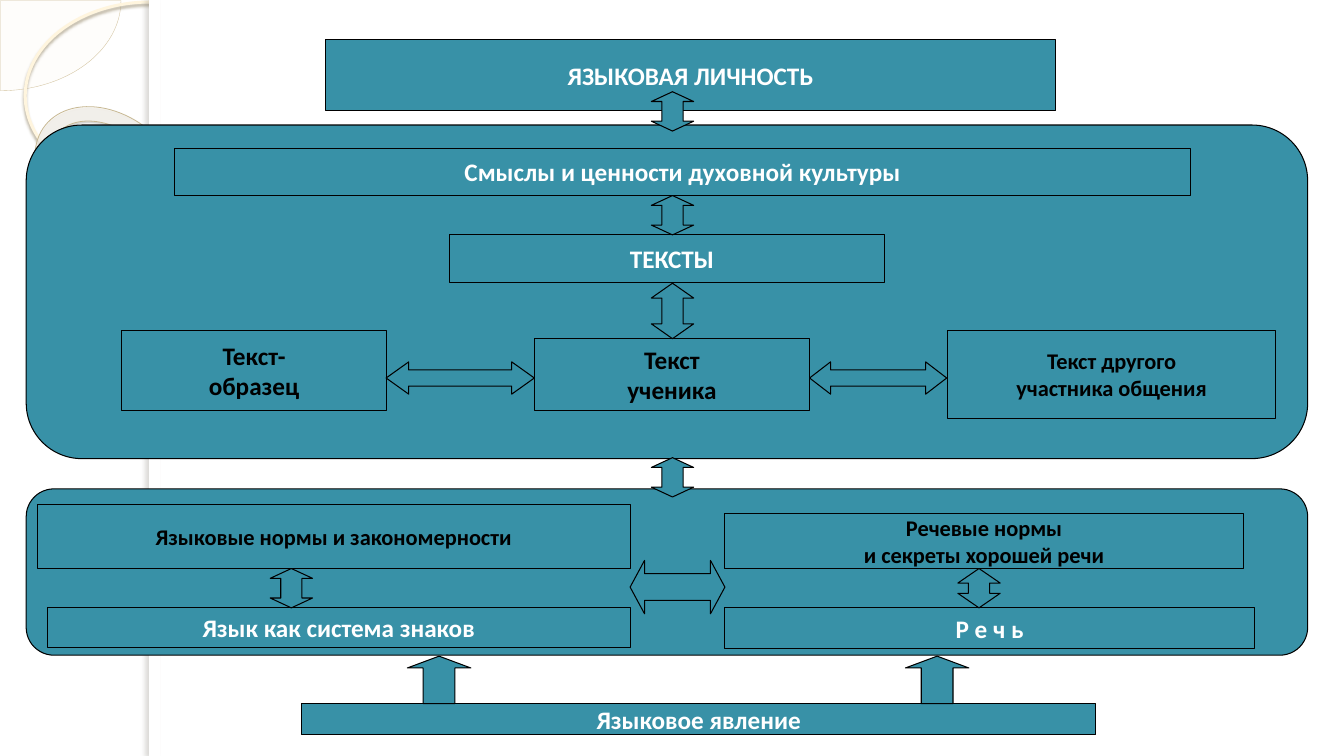
from dataclasses import dataclass
from typing import NamedTuple, Optional

from lxml.etree import SubElement
from pptx import Presentation
from pptx.dml.color import RGBColor
from pptx.enum.shapes import MSO_SHAPE
from pptx.enum.text import MSO_ANCHOR, PP_ALIGN
from pptx.oxml.ns import qn
from pptx.util import Pt

EMU_PER_PX = 9144  # 100 px to the inch


@dataclass(frozen=True)
class Theme:
    font: str = "Calibri"
    teal: str = "3891A7"
    black: str = "000000"
    white: str = "FFFFFF"
    pie_fill: str = "FEFAF4"
    pie_line: str = "D3C39F"
    ring_line: str = "FFF5DE"
    ring_shadow: str = "B0A68F"
    donut_fill: str = "FFFCF6"
    donut_line: str = "C7B893"
    donut_shadow: str = "5A5444"
    strip_shadow: str = "736F63"
    large: int = 18
    small: int = 16
    outline: float = 0.75


THEME = Theme()


class Frame(NamedTuple):
    left: int
    top: int
    width: int
    height: int


class Shadow(NamedTuple):
    color: str
    opacity: int
    blur: float
    distance: float
    angle: int


@dataclass(frozen=True)
class Ornament:
    kind: MSO_SHAPE
    frame: Frame
    fill: Optional[str] = None
    opacity: int = 100
    line: Optional[str] = None
    line_width: float = 0
    adjustments: tuple[float, ...] = ()
    rotation: float = 0
    shadow: Optional[Shadow] = None


@dataclass(frozen=True)
class Box:
    frame: Frame
    lines: tuple[str, ...]
    color: str = THEME.white
    size: int = THEME.large
    shift: int = 0


class Arrow(NamedTuple):
    kind: MSO_SHAPE
    frame: Frame
    head: float


ORNAMENTS = (
    Ornament(MSO_SHAPE.PIE, Frame(-119, -89, 239, 179), THEME.pie_fill, 33,
             THEME.pie_line, 0.25, (0, 54)),
    Ornament(MSO_SHAPE.OVAL, Frame(25, 2, 248, 186), line=THEME.ring_line,
             line_width=2.15, shadow=Shadow(THEME.ring_shadow, 85, 2, 2, 90)),
    Ornament(MSO_SHAPE.DONUT, Frame(27, 115, 164, 121), THEME.donut_fill, 65,
             THEME.donut_line, 0.58, (0.12,), 38.6,
             Shadow(THEME.donut_shadow, 35, 1, 1.2, 75)),
    Ornament(MSO_SHAPE.RECTANGLE, Frame(148, 0, 1185, 750), THEME.white),
    Ornament(MSO_SHAPE.RECTANGLE, Frame(148, 0, 11, 750), THEME.white,
             shadow=Shadow(THEME.strip_shadow, 25, 3, 3, 180)),
)

PANELS = (Frame(26, 124, 1271, 331), Frame(26, 485, 1271, 165))

BOXES = (
    Box(Frame(323, 39, 724, 71), ("ЯЗЫКОВАЯ ЛИЧНОСТЬ",)),
    Box(Frame(299, 698, 788, 31), ("Языковое явление",)),
    Box(Frame(37, 501, 588, 63), ("Языковые нормы и закономерности",),
        THEME.black, THEME.small),
    Box(Frame(47, 603, 578, 39), ("Язык как система знаков",)),
    Box(Frame(719, 509, 514, 55), ("Речевые нормы", "и секреты хорошей речи"),
        THEME.black, THEME.small),
    Box(Frame(719, 603, 525, 40), ("Р е ч ь",)),
    Box(Frame(173, 147, 1008, 47), ("Смыслы и ценности духовной культуры",)),
    Box(Frame(446, 233, 431, 47), ("ТЕКСТЫ",), shift=10),
    Box(Frame(121, 328, 262, 79), ("Текст-", "образец"), THEME.black),
    Box(Frame(530, 336, 273, 71), ("Текст", "ученика"), THEME.black),
    Box(Frame(940, 328, 325, 87), ("Текст другого", "участника общения"),
        THEME.black, THEME.small),
)

SPINE_LEFT = 646
ARROWS = (
    *(Arrow(MSO_SHAPE.UP_ARROW, Frame(left, 651, 63, 47), 0.25)
      for left in (404, 898)),
    *(Arrow(MSO_SHAPE.UP_DOWN_ARROW, Frame(SPINE_LEFT, top, 42, 39), 0.25)
      for top in (91, 194, 454)),
    Arrow(MSO_SHAPE.UP_DOWN_ARROW, Frame(SPINE_LEFT, 281, 42, 55), 0.35),
    Arrow(MSO_SHAPE.UP_DOWN_ARROW, Frame(268, 564, 42, 39), 0.25),
    Arrow(MSO_SHAPE.UP_DOWN_ARROW, Frame(950, 564, 42, 39), 0.37),
    Arrow(MSO_SHAPE.LEFT_RIGHT_ARROW, Frame(625, 556, 94, 53), 0.27),
    Arrow(MSO_SHAPE.LEFT_RIGHT_ARROW, Frame(383, 359, 147, 32), 0.7),
    Arrow(MSO_SHAPE.LEFT_RIGHT_ARROW, Frame(803, 359, 136, 32), 0.65),
)


def px(length: int) -> int:
    return length * EMU_PER_PX


def add_plain_shape(slide, kind: MSO_SHAPE, frame: Frame, fill: Optional[str],
                    line: Optional[str], line_width: float = THEME.outline):
    shape = slide.shapes.add_shape(kind, *map(px, frame))
    shape.shadow.inherit = False
    if fill:
        shape.fill.solid()
        shape.fill.fore_color.rgb = RGBColor.from_string(fill)
    else:
        shape.fill.background()
    if line:
        shape.line.color.rgb = RGBColor.from_string(line)
        shape.line.width = Pt(line_width)
    else:
        shape.line.fill.background()
    return shape


def add_alpha(color_element, percent: int) -> None:
    SubElement(color_element, qn("a:alpha"), val=str(percent * 1000))


def add_shadow(shape, shadow: Shadow) -> None:
    effects = shape._element.spPr.find(qn("a:effectLst"))
    outer = SubElement(effects, qn("a:outerShdw"),
                       blurRad=str(Pt(shadow.blur)),
                       dist=str(Pt(shadow.distance)),
                       dir=str(shadow.angle * 60000), rotWithShape="0")
    add_alpha(SubElement(outer, qn("a:srgbClr"), val=shadow.color),
              shadow.opacity)


def add_ornament(slide, ornament: Ornament) -> None:
    shape = add_plain_shape(slide, ornament.kind, ornament.frame, ornament.fill,
                            ornament.line, ornament.line_width)
    shape.rotation = ornament.rotation
    for index, value in enumerate(ornament.adjustments):
        shape.adjustments[index] = value
    if ornament.opacity < 100:
        color = shape._element.spPr.find(qn("a:solidFill")).find(qn("a:srgbClr"))
        add_alpha(color, ornament.opacity)
    if ornament.shadow:
        add_shadow(shape, ornament.shadow)


def add_box(slide, box: Box) -> None:
    shape = add_plain_shape(slide, MSO_SHAPE.RECTANGLE, box.frame,
                            THEME.teal, THEME.black)
    text_frame = shape.text_frame
    text_frame.word_wrap = False
    text_frame.vertical_anchor = MSO_ANCHOR.MIDDLE
    text_frame.margin_left += px(box.shift)
    for index, line in enumerate(box.lines):
        paragraph = (text_frame.add_paragraph() if index
                     else text_frame.paragraphs[0])
        paragraph.alignment = PP_ALIGN.CENTER
        run = paragraph.add_run()
        run.text = line
        run.font.name = THEME.font
        run.font.size = Pt(box.size)
        run.font.bold = True
        run.font.color.rgb = RGBColor.from_string(box.color)


def add_arrow(slide, arrow: Arrow) -> None:
    """Guides are written by name: python-pptx names both of an up-down arrow's adj1."""
    shape = add_plain_shape(slide, arrow.kind, arrow.frame,
                            THEME.teal, THEME.black)
    guides = shape._element.spPr.find(qn("a:prstGeom")).find(qn("a:avLst"))
    guides.clear()
    for name, value in (("adj1", 0.5), ("adj2", arrow.head)):
        SubElement(guides, qn("a:gd"), name=name,
                   fmla=f"val {round(value * 100000)}")


def main() -> None:
    presentation = Presentation()
    presentation.slide_width = px(1333)
    presentation.slide_height = px(750)
    slide = presentation.slides.add_slide(presentation.slide_layouts[6])
    for ornament in ORNAMENTS:
        add_ornament(slide, ornament)
    for frame in PANELS:
        add_plain_shape(slide, MSO_SHAPE.ROUNDED_RECTANGLE, frame,
                        THEME.teal, THEME.black)
    for box in BOXES:
        add_box(slide, box)
    for arrow in ARROWS:
        add_arrow(slide, arrow)
    presentation.save("out.pptx")


if __name__ == "__main__":
    main()
